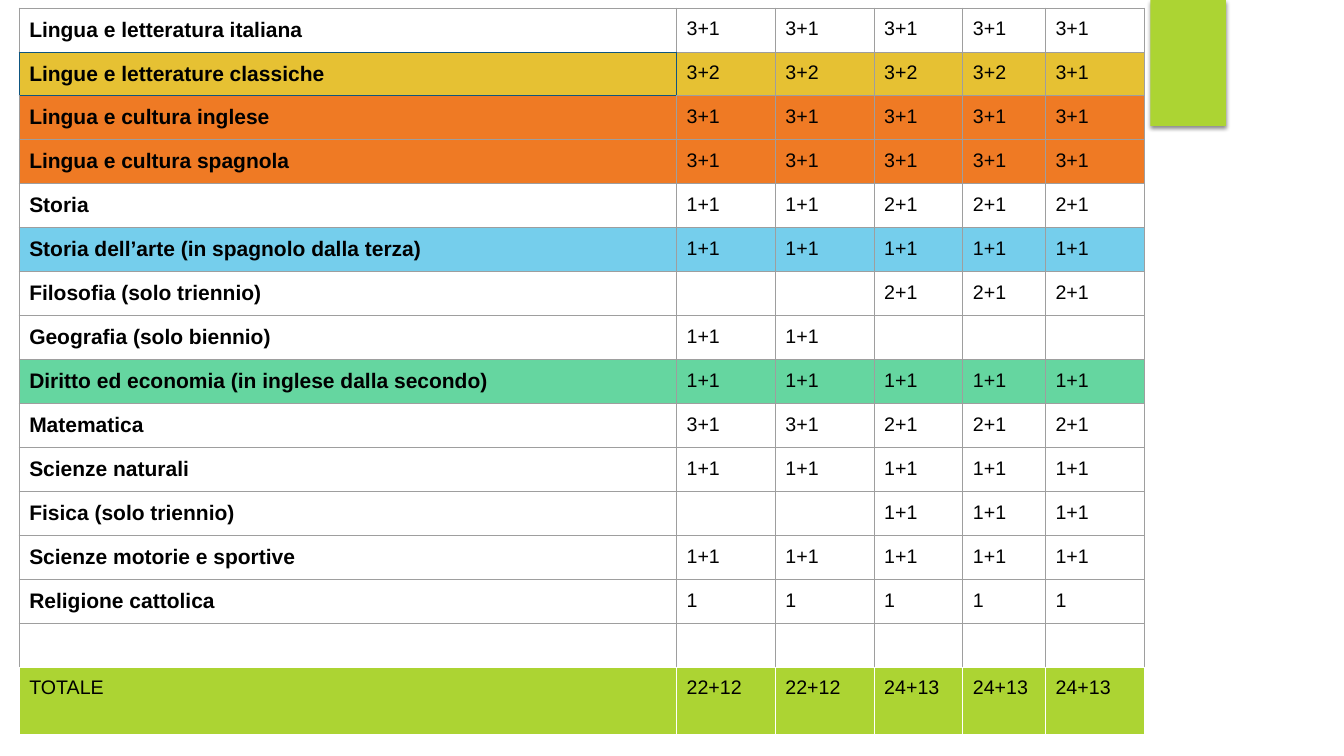
import pptx
import pptx.dml.color
import pptx.enum.shapes
import pptx.oxml
import pptx.util
from pptx.oxml.ns import nsdecls

FONT = "Arial"
BLACK, WHITE, GREY, BLUE = "000000", "FFFFFF", "9E9E9E", "0E5580"
GREEN, GOLD, ORANGE, SKY, MINT = "ACD433", "E6C133", "EF7A24", "75CEEC", "65D6A0"

COLUMN_WIDTHS = [6.52, 0.98, 0.98, 0.88, 0.82, 0.98]
TOTAL_HEIGHT = 0.67
INSET = 0.1

# Subject, hours for each of the five years, row fill
TIMETABLE = [
    ("Lingua e letteratura italiana", ["3+1"] * 5, None),
    ("Lingue e letterature classiche", ["3+2"] * 4 + ["3+1"], GOLD),
    ("Lingua e cultura inglese", ["3+1"] * 5, ORANGE),
    ("Lingua e cultura spagnola", ["3+1"] * 5, ORANGE),
    ("Storia", ["1+1"] * 2 + ["2+1"] * 3, None),
    ("Storia dell’arte (in spagnolo dalla terza)", ["1+1"] * 5, SKY),
    ("Filosofia (solo triennio)", [""] * 2 + ["2+1"] * 3, None),
    ("Geografia (solo biennio)", ["1+1"] * 2 + [""] * 3, None),
    ("Diritto ed economia (in inglese dalla secondo)", ["1+1"] * 5, MINT),
    ("Matematica", ["3+1"] * 2 + ["2+1"] * 3, None),
    ("Scienze naturali", ["1+1"] * 5, None),
    ("Fisica (solo triennio)", [""] * 2 + ["1+1"] * 3, None),
    ("Scienze motorie e sportive", ["1+1"] * 5, None),
    ("Religione cattolica", ["1"] * 5, None),
    ("", [""] * 5, None),
    ("TOTALE", ["22+12"] * 2 + ["24+13"] * 3, GREEN),
]
TOTAL_ROW = len(TIMETABLE) - 1
OUTLINED_CELL = (1, 0)


def colour(code):
    return pptx.dml.color.RGBColor.from_string(code)


def inches(*lengths):
    return [pptx.util.Inches(length) for length in lengths]


def border_colour(row, column):
    if row == TOTAL_ROW:
        return WHITE
    return BLUE if (row, column) == OUTLINED_CELL else GREY


def add_borders(cell, row, column):
    """A coloured outline wins over the grey one of the cell next to it."""
    own = border_colour(row, column)
    neighbours = {"lnL": (row, column - 1), "lnR": (row, column + 1),
                  "lnT": (row - 1, column), "lnB": (row + 1, column)}
    properties = cell._tc.get_or_add_tcPr()
    for position, (side, neighbour) in enumerate(neighbours.items()):
        code = own if own != GREY else border_colour(*neighbour)
        properties.insert(position, pptx.oxml.parse_xml(
            f'<a:{side} {nsdecls("a")} w="{pptx.util.Pt(0.75)}"><a:solidFill>'
            f'<a:srgbClr val="{code}"/></a:solidFill></a:{side}>'))


def fill_cell(cell, text, size, bold, fill):
    if fill:
        cell.fill.solid()
        cell.fill.fore_color.rgb = colour(fill)
    else:
        cell.fill.background()
    if not text:
        return
    cell.margin_left, cell.margin_right, cell.margin_top, cell.margin_bottom = inches(*[INSET] * 4)
    span = cell.text_frame.paragraphs[0].add_run()
    span.text = text
    span.font.name = FONT
    span.font.size = pptx.util.Pt(size)
    span.font.bold = bold
    span.font.color.rgb = colour(BLACK)


def add_timetable(page, left, top, width, height):
    table = page.shapes.add_table(len(TIMETABLE), len(COLUMN_WIDTHS),
                                  *inches(left, top, width, height)).table
    table.first_row = table.horz_banding = False
    for column, share in zip(table.columns, COLUMN_WIDTHS):
        column.width = pptx.util.Inches(width * share / sum(COLUMN_WIDTHS))
    subject_height = (height - TOTAL_HEIGHT) / TOTAL_ROW
    for row, (subject, hours, fill) in enumerate(TIMETABLE):
        is_total = row == TOTAL_ROW
        table.rows[row].height = pptx.util.Inches(TOTAL_HEIGHT if is_total else subject_height)
        for column, text in enumerate([subject] + hours):
            is_subject = column == 0 and not is_total
            cell = table.cell(row, column)
            fill_cell(cell, text, 15 if is_subject else 14, is_subject, fill)
            add_borders(cell, row, column)


def add_tab(page, left, top, width, height):
    tab = page.shapes.add_shape(pptx.enum.shapes.MSO_SHAPE.RECTANGLE,
                                *inches(left, top, width, height))
    tab.fill.solid()
    tab.fill.fore_color.rgb = colour(GREEN)
    tab.line.fill.background()
    tab._element.spPr.append(pptx.oxml.parse_xml(
        f'<a:effectLst {nsdecls("a")}><a:outerShdw blurRad="{pptx.util.Pt(3)}" '
        f'dist="{pptx.util.Pt(2)}" dir="5400000" rotWithShape="0"><a:srgbClr val="{BLACK}">'
        '<a:alpha val="45000"/></a:srgbClr></a:outerShdw></a:effectLst>'))


def main():
    deck = pptx.Presentation()
    deck.slide_width, deck.slide_height = inches(13.33, 7.5)
    page = deck.slides.add_slide(deck.slide_layouts[6])
    # Green tab at the top edge
    add_tab(page, 11.41, 0, 0.75, 1.25)
    # Weekly hours by subject and year
    add_timetable(page, 0.19, 0.08, sum(COLUMN_WIDTHS), 7.21)
    deck.save("out.pptx")


if __name__ == "__main__":
    main()
